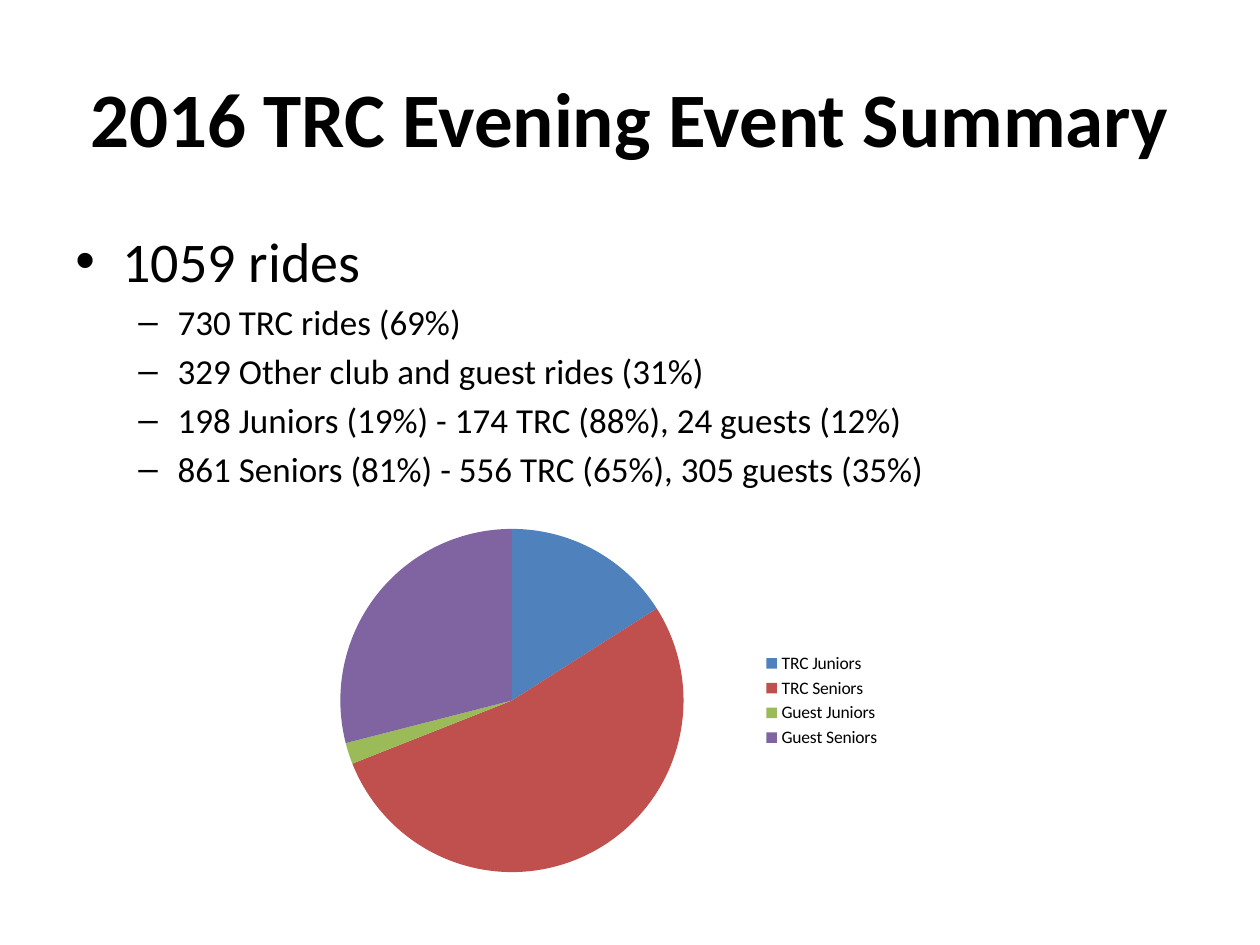
from dataclasses import dataclass

from lxml.etree import SubElement
from pptx import Presentation
from pptx.chart.data import CategoryChartData
from pptx.dml.color import RGBColor
from pptx.enum.chart import XL_CHART_TYPE, XL_LEGEND_POSITION
from pptx.enum.text import MSO_ANCHOR, PP_ALIGN
from pptx.oxml.ns import qn
from pptx.util import Pt

FONT = "Calibri"
BLACK = "000000"


@dataclass
class Level:
    size: float
    left: float
    hang: float
    mark: str


@dataclass
class Line:
    text: str
    level: int


@dataclass
class Slice:
    name: str
    value: int
    color: str


LEVELS = [Level(32, 27, 27, "•"), Level(20, 58.5, 22.5, "–")]
LINES = [
    Line("1059 rides", 0),
    Line("730 TRC rides (69%)", 1),
    Line("329 Other club and guest rides (31%)", 1),
    Line("198 Juniors (19%) - 174 TRC (88%), 24 guests (12%)", 1),
    Line("861 Seniors (81%) - 556 TRC (65%), 305 guests (35%)", 1),
]
SLICES = [
    Slice("TRC Juniors", 16, "4F81BD"),
    Slice("TRC Seniors", 53, "C0504D"),
    Slice("Guest Juniors", 2, "9BBB59"),
    Slice("Guest Seniors", 29, "8064A2"),
]


def paint(target, color: str) -> None:
    if hasattr(target, "solid"):
        target.solid()
        target.fore_color.rgb = RGBColor.from_string(color)
    else:
        target.color.rgb = RGBColor.from_string(color)


def style(font, size: float, bold: bool = False) -> None:
    font.name = FONT
    font.size = Pt(size)
    font.bold = bold
    paint(font, BLACK)


def add_box(slide, left: float, top: float, width: float, height: float):
    box = slide.shapes.add_textbox(Pt(left), Pt(top), Pt(width), Pt(height))
    box.text_frame.word_wrap = True
    return box.text_frame


def add_title(slide, text: str) -> None:
    frame = add_box(slide, 36, 21.6, 648, 90)
    frame.vertical_anchor = MSO_ANCHOR.MIDDLE
    frame.text = text
    para = frame.paragraphs[0]
    para.alignment = PP_ALIGN.CENTER
    style(para.runs[0].font, 44, True)


def add_list(slide, lines: list[Line]) -> None:
    frame = add_box(slide, 36, 126, 648, 356.4)
    frame.text = "\n".join(line.text for line in lines)
    for para, line in zip(frame.paragraphs, lines):
        level = LEVELS[line.level]
        para.level = line.level
        para.space_before = Pt(level.size * 0.2)
        style(para.runs[0].font, level.size)
        props = para._p.get_or_add_pPr()
        props.set("marL", str(Pt(level.left)))
        props.set("indent", str(-Pt(level.hang)))
        SubElement(props, qn("a:buFont"), typeface="Arial")
        SubElement(props, qn("a:buChar"), char=level.mark)


def add_pie(slide, slices: list[Slice]) -> None:
    data = CategoryChartData()
    data.categories = [part.name for part in slices]
    data.add_series("Series 1", [part.value for part in slices])
    chart = slide.shapes.add_chart(
        XL_CHART_TYPE.PIE, Pt(150.5), Pt(292.3), Pt(360), Pt(216), data
    ).chart
    style(chart.font, 10)
    chart.has_title = False
    chart.has_legend = True
    chart.legend.position = XL_LEGEND_POSITION.RIGHT
    chart.legend.include_in_layout = False
    plot = chart.plots[0]
    plot.vary_by_categories = True
    for index, part in enumerate(slices):
        paint(plot.series[0].points[index].format.fill, part.color)


def main() -> None:
    deck = Presentation()
    deck.slide_width = Pt(720)
    deck.slide_height = Pt(540)
    slide = deck.slides.add_slide(deck.slide_layouts[6])
    paint(slide.background.fill, "FFFFFF")
    add_title(slide, "2016 TRC Evening Event Summary")
    add_list(slide, LINES)
    add_pie(slide, SLICES)
    deck.save("out.pptx")


if __name__ == "__main__":
    main()
